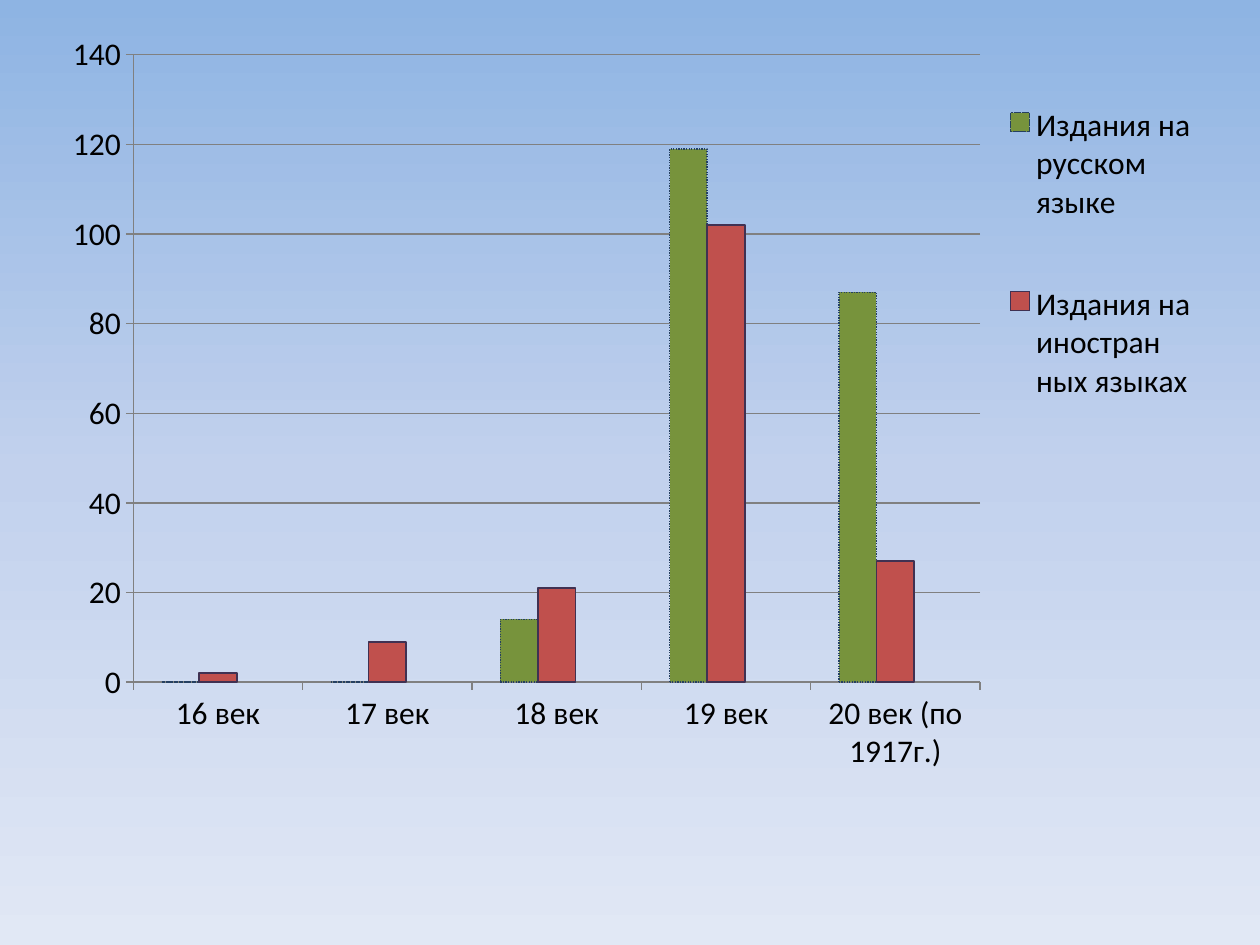
from copy import deepcopy

from lxml.etree import SubElement
from pptx import Presentation
from pptx.chart.data import CategoryChartData
from pptx.dml.color import RGBColor
from pptx.enum.chart import XL_CHART_TYPE as ChartType
from pptx.enum.chart import XL_LEGEND_POSITION as LegendPosition
from pptx.enum.chart import XL_TICK_MARK as TickMark
from pptx.enum.dml import MSO_LINE_DASH_STYLE as Dash
from pptx.oxml.ns import qn
from pptx.util import Pt

PX = 914400 // 126
CATEGORIES = ["16 век", "17 век", "18 век", "19 век", "20 век (по 1917г.)"]
SERIES = [
    ("Издания на русском языке", [0, 0, 14, 119, 87], "77933C", ("254061", 0.75, Dash.ROUND_DOT)),
    ("Издания на иностран ных языках", [2, 9, 21, 102, 27], "C0504D", ("403152", 1, None)),
    ("Series 3", [None] * 5, "9BBB59", None),
]


def px(length):
    """Turn pixels into EMU."""
    return length * PX


def color(value):
    """Turn a hex string into a colour."""
    return RGBColor.from_string(value)


def apply(target, formats):
    """Set attributes from a dict of format values."""
    for name, value in formats.items():
        setattr(target, name, value)


def set_background(slide, stops):
    """Fill the slide with a gradient running from top to bottom."""
    fill = slide.background.fill
    fill.gradient()
    fill.gradient_angle = 270
    stop_list = fill._fill._gradFill.find(qn("a:gsLst"))
    stop_list.insert(1, deepcopy(stop_list[0]))
    for stop, (position, value) in zip(fill.gradient_stops, stops):
        stop.position = position
        stop.color.rgb = color(value)


def set_line(line, value, width, dash=None):
    """Give a line its colour, width and dash."""
    line.color.rgb = color(value)
    apply(line, {"width": Pt(width), "dash_style": dash})


def set_font(font):
    """Give chart text its font."""
    apply(font, {"name": "Calibri", "size": Pt(18), "bold": False})
    font.color.rgb = color("000000")


def set_layout(parent, index, box, inner=False):
    """Place a chart part by fractions of the chart."""
    for old in parent.findall(qn("c:layout")):
        parent.remove(old)
    layout = parent.makeelement(qn("c:layout"), {})
    parent.insert(index, layout)
    manual = SubElement(layout, qn("c:manualLayout"))
    values = {"layoutTarget": "inner"} if inner else {}
    values.update({"xMode": "edge", "yMode": "edge"})
    values.update(zip("xywh", map(str, box)))
    for name, value in values.items():
        SubElement(manual, qn(f"c:{name}"), val=value)


def format_axis(axis):
    """Style an axis with its labels and ticks."""
    apply(axis, {"major_tick_mark": TickMark.OUTSIDE, "minor_tick_mark": TickMark.NONE})
    set_line(axis.format.line, "808080", 0.75)
    set_font(axis.tick_labels.font)


def format_legend(chart, hidden_index):
    """Set the legend at the right without the empty series."""
    chart.has_legend = True
    legend = chart.legend
    apply(legend, {"position": LegendPosition.RIGHT, "include_in_layout": False})
    set_font(legend.font)
    element = legend._element
    set_layout(element, 1, (0.83, 0.03, 0.17, 0.49))
    entry = element.makeelement(qn("c:legendEntry"), {})
    element.insert(1, entry)
    SubElement(entry, qn("c:idx"), val=str(hidden_index))
    SubElement(entry, qn("c:delete"), val="1")


def add_column_chart(slide, left, top, width, height):
    """Add the chart of editions by century."""
    data = CategoryChartData()
    data.categories = CATEGORIES
    for name, values, *_ in SERIES:
        data.add_series(name, values)
    frame = slide.shapes.add_chart(
        ChartType.COLUMN_CLUSTERED, *map(px, (left, top, width, height)), data)
    chart = frame.chart
    chart.has_title = False
    set_font(chart.font)
    plot = chart.plots[0]
    apply(plot, {"gap_width": 150, "overlap": 0, "vary_by_categories": False})
    for series, (_, _, fill, line) in zip(plot.series, SERIES):
        series.format.fill.solid()
        series.format.fill.fore_color.rgb = color(fill)
        if line:
            set_line(series.format.line, *line)
    for axis in (chart.category_axis, chart.value_axis):
        format_axis(axis)
    axis = chart.value_axis
    apply(axis, {"minimum_scale": 0, "maximum_scale": 140, "major_unit": 20})
    set_line(axis.major_gridlines.format.line, "808080", 0.75)
    set_layout(chart._chartSpace.chart.plotArea, 0, (0.077, 0.045, 0.73, 0.727), inner=True)
    format_legend(chart, len(SERIES) - 1)


def main():
    """Build the slide and save it."""
    presentation = Presentation()
    apply(presentation, {"slide_width": px(1260), "slide_height": px(945)})
    slide = presentation.slides.add_slide(presentation.slide_layouts[6])
    set_background(slide, [(0, "8EB4E3"), (0.5, "C2D1ED"), (1, "E1E8F5")])
    add_column_chart(slide, 44, 16, 1160, 863)
    presentation.save("out.pptx")


if __name__ == "__main__":
    main()
